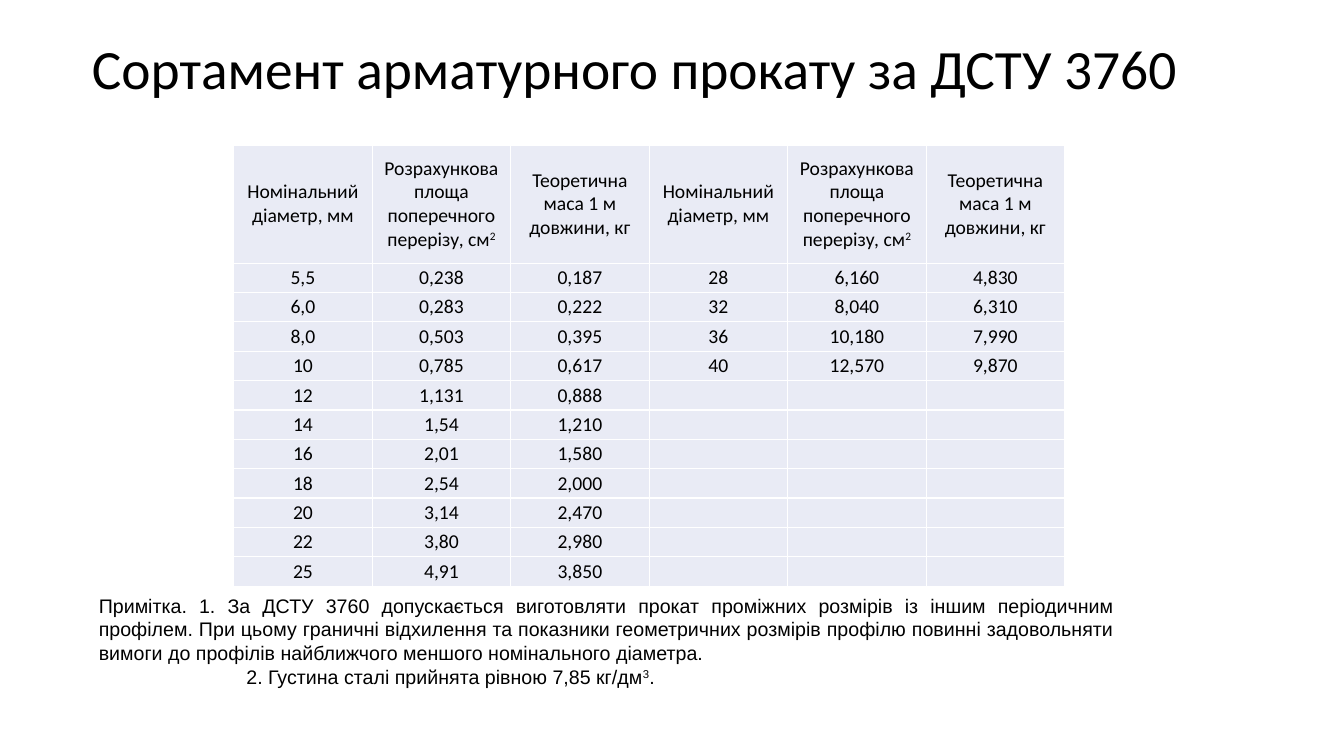
from itertools import product

from lxml import etree
from pptx import Presentation
from pptx.dml.color import RGBColor
from pptx.enum.text import MSO_ANCHOR, MSO_AUTO_SIZE, PP_ALIGN
from pptx.oxml.ns import qn
from pptx.util import Cm, Pt

TITLE = "Сортамент арматурного прокату за ДСТУ 3760"
HEADINGS = [
    "Номінальний діаметр, мм",
    "Розрахункова площа поперечного перерізу, см^2^",
    "Теоретична маса 1 м довжини, кг",
]
BARS = [
    ("5,5", "0,238", "0,187"),
    ("6,0", "0,283", "0,222"),
    ("8,0", "0,503", "0,395"),
    ("10", "0,785", "0,617"),
    ("12", "1,131", "0,888"),
    ("14", "1,54", "1,210"),
    ("16", "2,01", "1,580"),
    ("18", "2,54", "2,000"),
    ("20", "3,14", "2,470"),
    ("22", "3,80", "2,980"),
    ("25", "4,91", "3,850"),
    ("28", "6,160", "4,830"),
    ("32", "8,040", "6,310"),
    ("36", "10,180", "7,990"),
    ("40", "12,570", "9,870"),
]
NOTES = [
    ("Примітка. 1. За ДСТУ 3760 допускається виготовляти прокат проміжних розмірів "
     "із іншим періодичним профілем. При цьому граничні відхилення та показники "
     "геометричних розмірів профілю повинні задовольняти вимоги до профілів "
     "найближчого меншого номінального діаметра.", Cm(0)),
    ("2. Густина сталі прийнята рівною 7,85 кг/дм^3^.", Cm(3.72)),
]

BLACK = RGBColor(0x00, 0x00, 0x00)
CELL_FILL = RGBColor(0xE9, 0xEB, 0xF5)
BORDER = RGBColor(0xFF, 0xFF, 0xFF)
CENTER, JUSTIFY = PP_ALIGN.CENTER, PP_ALIGN.JUSTIFY
MIDDLE = MSO_ANCHOR.MIDDLE
NO_AUTOFIT = MSO_AUTO_SIZE.NONE

TITLE_ONLY = 5
BODY_SIZE = 14
BODY_ROWS = 11
COLUMN_WIDTH = Cm(3.49)
HEADER_HEIGHT, ROW_HEIGHT = Cm(2.97), Cm(0.74)


def write(paragraph, text, font_name, size, alignment):
    """Write text into a paragraph, raising the parts between carets."""
    paragraph.alignment = alignment
    for index, part in enumerate(text.split("^")):
        if part:
            run = paragraph.add_run()
            run.text = part
            run.font.name = font_name
            run.font.size = Pt(size)
            run.font.color.rgb = BLACK
            if index % 2:
                run.font._element.set("baseline", "30000")
    if not text:
        end = etree.SubElement(paragraph._p, qn("a:endParaRPr"))
        end.set("sz", str(size * 100))


def add_borders(cell):
    """Draw a thin line on each side of a cell."""
    properties = cell._tc.get_or_add_tcPr()
    for index, side in enumerate(("lnL", "lnR", "lnT", "lnB")):
        line = etree.Element(qn(f"a:{side}"), w=str(Pt(1)))
        fill = etree.SubElement(line, qn("a:solidFill"))
        etree.SubElement(fill, qn("a:srgbClr"), val=str(BORDER))
        properties.insert(index, line)


def add_title(slide):
    """Place the slide title."""
    title = slide.shapes.title
    title.left, title.top, title.width, title.height = Cm(0.46), Cm(1.02), Cm(31.06), Cm(1.55)
    title.text_frame.auto_size = NO_AUTOFIT
    title.text_frame.vertical_anchor = MIDDLE
    paragraph = title.text_frame.paragraphs[0]
    paragraph.line_spacing = 0.9
    write(paragraph, TITLE, "Calibri", 39.6, CENTER)


def add_bar_table(slide):
    """Lay the bars out in two side-by-side blocks of columns."""
    block = len(HEADINGS)
    columns, rows = 2 * block, BODY_ROWS + 1
    frame = slide.shapes.add_table(
        rows, columns, Cm(5.89), Cm(3.66),
        COLUMN_WIDTH * columns, HEADER_HEIGHT + ROW_HEIGHT * BODY_ROWS)
    table = frame.table
    table.first_row = table.horz_banding = False
    for column in table.columns:
        column.width = COLUMN_WIDTH
    for index, row in enumerate(table.rows):
        row.height = ROW_HEIGHT if index else HEADER_HEIGHT
    for row, column in product(range(rows), range(columns)):
        side, field = divmod(column, block)
        bar = side * BODY_ROWS + row - 1
        if row == 0:
            text = HEADINGS[field]
        else:
            text = BARS[bar][field] if bar < len(BARS) else ""
        cell = table.cell(row, column)
        cell.fill.solid()
        cell.fill.fore_color.rgb = CELL_FILL
        cell.vertical_anchor = MIDDLE
        cell.margin_left = cell.margin_right = Cm(0.15)
        cell.margin_top = cell.margin_bottom = 0
        write(cell.text_frame.paragraphs[0], text, "Calibri", BODY_SIZE, CENTER)
        add_borders(cell)


def add_notes(slide):
    """Write the notes under the table."""
    box = slide.shapes.add_textbox(Cm(2.24), Cm(14.83), Cm(26.09), Cm(2.64))
    text_frame = box.text_frame
    text_frame.word_wrap = True
    text_frame.vertical_anchor = MIDDLE
    for index, (text, indent) in enumerate(NOTES):
        paragraph = text_frame.add_paragraph() if index else text_frame.paragraphs[0]
        write(paragraph, text, "Arial", BODY_SIZE, JUSTIFY)
        paragraph._p.get_or_add_pPr().set("indent", str(indent))


def main():
    """Build the slide and save it."""
    presentation = Presentation()
    presentation.slide_width, presentation.slide_height = Cm(33.87), Cm(19.05)
    slide = presentation.slides.add_slide(presentation.slide_layouts[TITLE_ONLY])
    add_title(slide)
    add_bar_table(slide)
    add_notes(slide)
    presentation.save("out.pptx")


if __name__ == "__main__":
    main()
